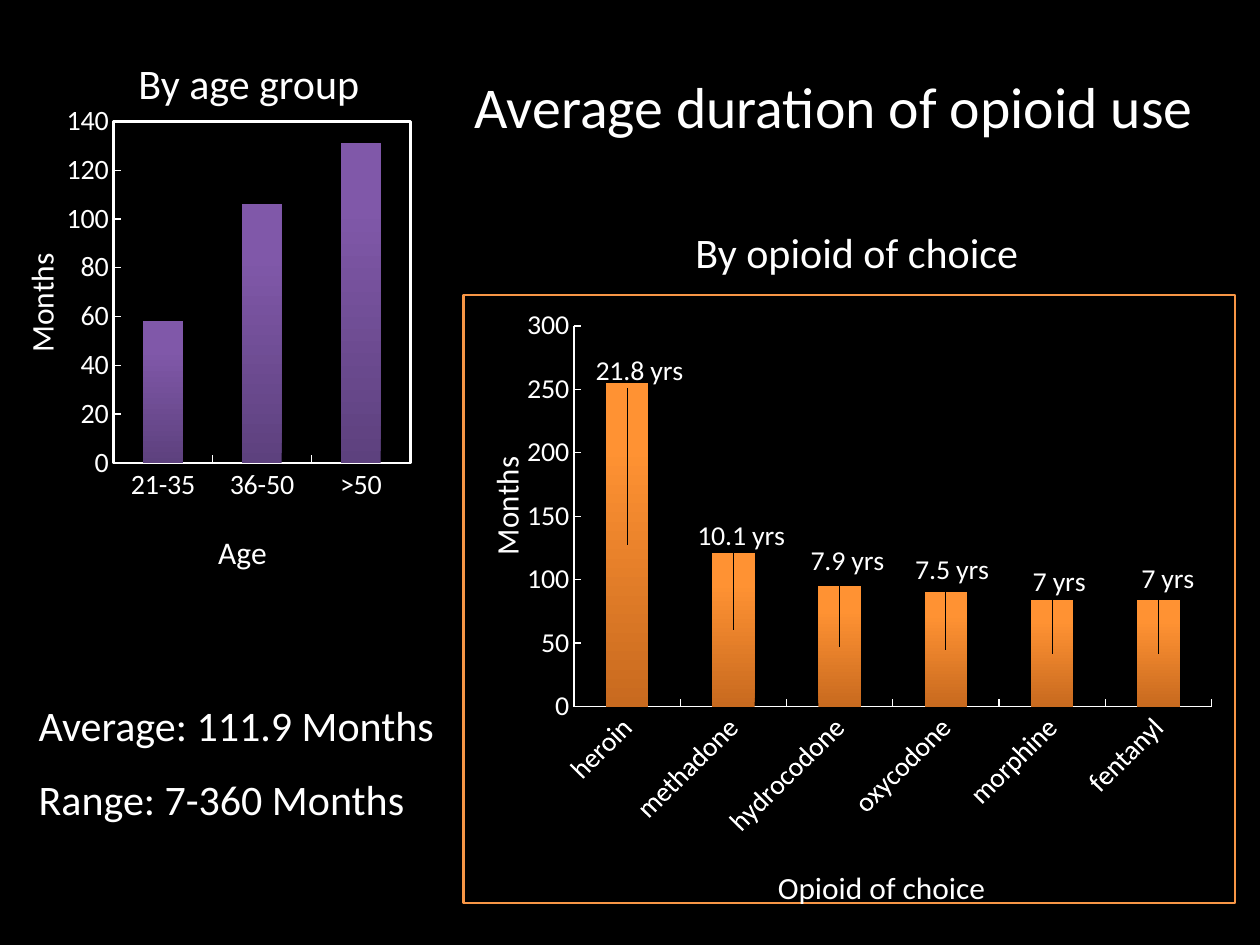
from lxml import etree
from pptx import Presentation
from pptx.chart.data import CategoryChartData
from pptx.dml.color import RGBColor
from pptx.enum.chart import XL_CHART_TYPE as ChartType, XL_TICK_MARK as Tick
from pptx.enum.text import MSO_ANCHOR as Anchor, PP_ALIGN as Align
from pptx.oxml import parse_xml
from pptx.oxml.ns import nsdecls, qn
from pptx.util import Cm, Pt

FONT = "Calibri"
COLORS = {
    "background": "000000",
    "text": "FFFFFF",
    "purple": "8058A9",
    "purple_dark": "5D417E",
    "orange": "FF9233",
    "orange_dark": "C86A1F",
    "frame": "F79646",
}


def rgb(name):
    return RGBColor.from_string(COLORS[name])


def style(font, size):
    font.name, font.size, font.bold = FONT, Pt(size), False
    font.color.rgb = rgb("text")


def manual_layout(inner=False, edge=True, **fractions):
    layout = etree.Element(qn("c:layout"))
    manual = etree.SubElement(layout, qn("c:manualLayout"))
    settings = {"layoutTarget": "inner"} if inner else {}
    if edge:
        settings.update(xMode="edge", yMode="edge")
    settings.update(fractions)
    for tag, value in settings.items():
        etree.SubElement(manual, qn(f"c:{tag}")).set("val", str(value))
    return layout


def replace_layout(parent, layout, index):
    for old in parent.findall(qn("c:layout")):
        parent.remove(old)
    parent.insert(index, layout)


def outline(color, width):
    return parse_xml(
        f'<c:spPr {nsdecls("c", "a")}><a:noFill/><a:ln w="{Pt(width)}"><a:solidFill>'
        f'<a:srgbClr val="{COLORS[color]}"/></a:solidFill></a:ln></c:spPr>'
    )


def format_axis(axis, caption, position, rotation):
    style(axis.tick_labels.font, 16)
    axis.major_tick_mark, axis.minor_tick_mark = Tick.INSIDE, Tick.NONE
    axis.has_major_gridlines = False
    axis.format.line.color.rgb = rgb("text")
    axis.format.line.width = Pt(0.75)
    heading = axis.axis_title
    heading.text_frame.text = caption
    style(heading.text_frame.paragraphs[0].font, 18)
    title = axis._element.find(qn("c:title"))
    title.find(f".//{qn('a:bodyPr')}").set("rot", str(rotation * 60000))
    x, y = position
    replace_layout(title, manual_layout(x=x, y=y), 1)


def add_bars(slide, box, kind, durations, category, positions, top, step, plot_box, color):
    data = CategoryChartData(number_format="0")
    data.categories = list(durations)
    data.add_series("Series 1", durations.values())
    chart = slide.shapes.add_chart(kind, *map(Cm, box), data).chart
    chart.has_legend = chart.has_title = False
    style(chart.font, 10)

    months, groups = chart.value_axis, chart.category_axis
    format_axis(groups, category, positions[0], 0)
    format_axis(months, "Months", positions[1], -90)
    months.minimum_scale, months.maximum_scale, months.major_unit = 0, top, step
    months.tick_labels.number_format = "0"
    months.tick_labels.number_format_is_linked = False

    bars = chart.plots[0]
    bars.gap_width, bars.vary_by_categories = 150, False
    fill = bars.series[0].format.fill
    fill.gradient()
    fill.gradient_angle = 90
    bottom, crown = fill.gradient_stops
    bottom.color.rgb, crown.color.rgb = rgb(f"{color}_dark"), rgb(color)
    bottom.position, crown.position = 0, 0.8

    area = chart._chartSpace.find(f".//{qn('c:plotArea')}")
    replace_layout(area, manual_layout(inner=True, **dict(zip("xywh", plot_box))), 0)
    return chart


def add_age_chart(slide, box):
    chart = add_bars(
        slide, box, ChartType.COLUMN_CLUSTERED,
        {"21-35": 58, "36-50": 106, ">50": 131},
        "Age", [(0.53, 0.87), (0.08, 0.31)], 140, 20,
        (0.306, 0.055, 0.673, 0.69), "purple",
    )
    chart._chartSpace.find(f".//{qn('c:plotArea')}").append(outline("text", 1.5))


def add_opioid_chart(slide, box):
    chart = add_bars(
        slide, box, ChartType.COLUMN_STACKED,
        {"heroin": 255, "methadone": 121, "hydrocodone": 95,
         "oxycodone": 90, "morphine": 84, "fentanyl": 84},
        "Opioid of choice", [(0.4, 0.93), (0.02, 0.26)], 300, 50,
        (0.143, 0.051, 0.827, 0.626), "orange",
    )
    chart.plots[0].overlap = 100
    groups = chart.category_axis._element
    groups.find(f"{qn('c:txPr')}/{qn('a:bodyPr')}").set("rot", str(-45 * 60000))
    chart._chartSpace.find(qn("c:chart")).addnext(outline("frame", 1.5))

    years = [
        ("21.8 yrs", 0.016, -0.285), ("10.1 yrs", 0.01, -0.153),
        ("7.9 yrs", 0.01, -0.14), ("7.5 yrs", 0.008, -0.13),
        ("7 yrs", 0.009, -0.117), ("7 yrs", 0.012, -0.122),
    ]
    series = chart.plots[0].series[0]
    for index, (duration, _, _) in enumerate(years):
        label = series.points[index].data_label.text_frame
        label.text = duration
        style(label.paragraphs[0].font, 16)
    labels = chart._chartSpace.iter(qn("c:dLbl"))
    for label, (_, x, y) in zip(list(labels), years):
        replace_layout(label, manual_layout(edge=False, x=x, y=y), 1)


def add_heading(slide, box):
    heading = slide.shapes.title
    heading.left, heading.top, heading.width, heading.height = map(Cm, box)
    frame = heading.text_frame
    frame.text = "Average duration of opioid use"
    frame.vertical_anchor = Anchor.MIDDLE
    frame.paragraphs[0].alignment = Align.CENTER
    style(frame.paragraphs[0].font, 33)


def add_caption(slide, box, words, wrap=False):
    frame = slide.shapes.add_textbox(*map(Cm, box)).text_frame
    frame.word_wrap = wrap
    frame.vertical_anchor = Anchor.MIDDLE if wrap else Anchor.TOP
    frame.text = words
    style(frame.paragraphs[0].font, 24)


def add_summary(slide, box):
    left, top, width, height = box
    add_caption(slide, (left, top, width, 1.27), "Average: 111.9 Months")
    add_caption(slide, (left, top + 1.07, width - 0.3, height - 1.07),
                "Range: 7-360 Months", wrap=True)


def main():
    deck = Presentation()
    deck.slide_width, deck.slide_height = Cm(25.4), Cm(19.05)
    slide = deck.slides.add_slide(deck.slide_layouts[5])
    slide.background.fill.solid()
    slide.background.fill.fore_color.rgb = rgb("background")

    add_heading(slide, (9.09, 0.43, 15.44, 3.38))
    add_age_chart(slide, (-0.43, 1.9, 8.89, 9.98))
    add_caption(slide, (2.54, 1.04, 5, 1.27), "By age group")
    add_caption(slide, (13.77, 4.45, 7.09, 1.27), "By opioid of choice")
    add_summary(slide, (0.53, 13.97, 8.56, 3.18))
    add_opioid_chart(slide, (9.32, 5.92, 15.6, 12.55))
    deck.save("out.pptx")


if __name__ == "__main__":
    main()
